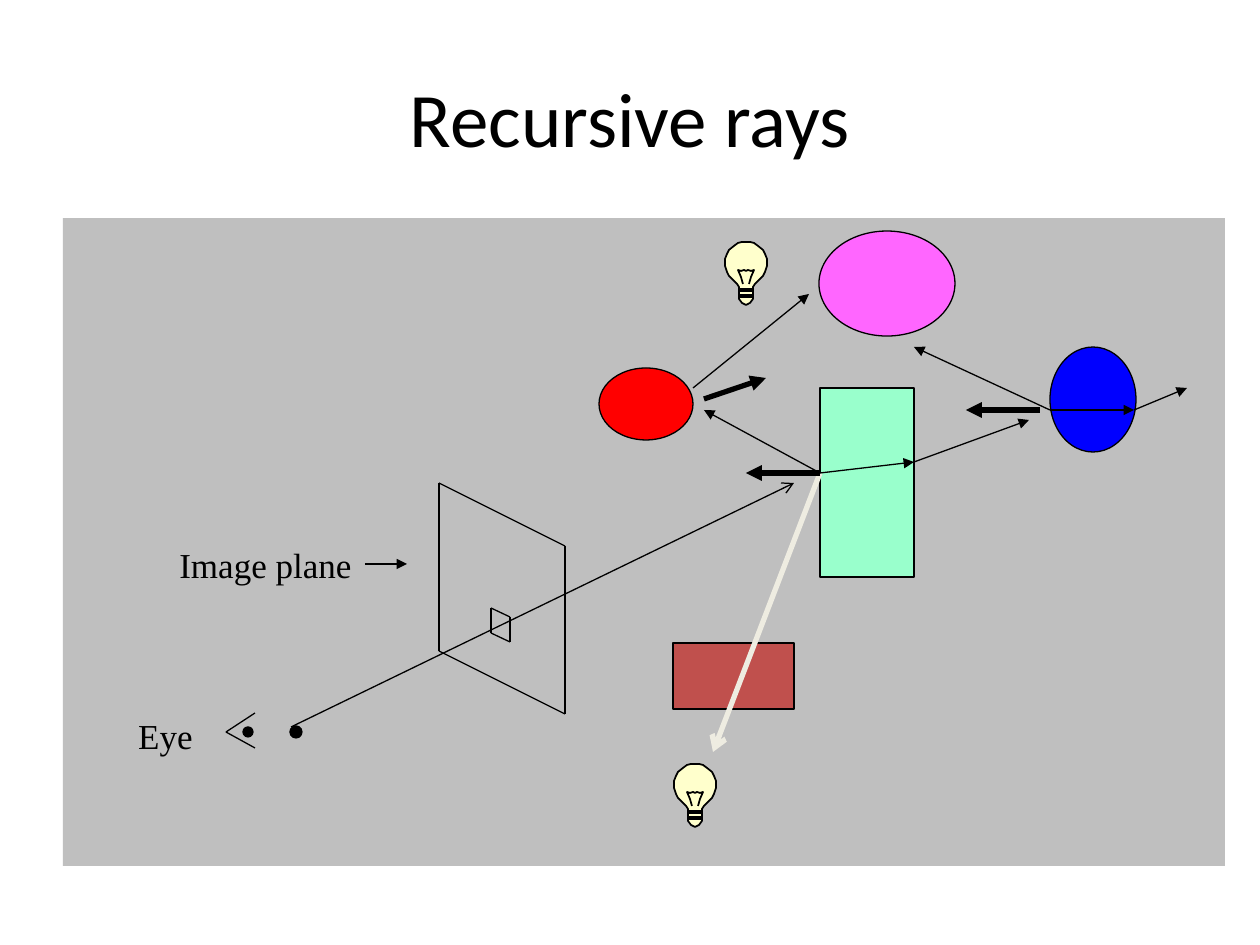
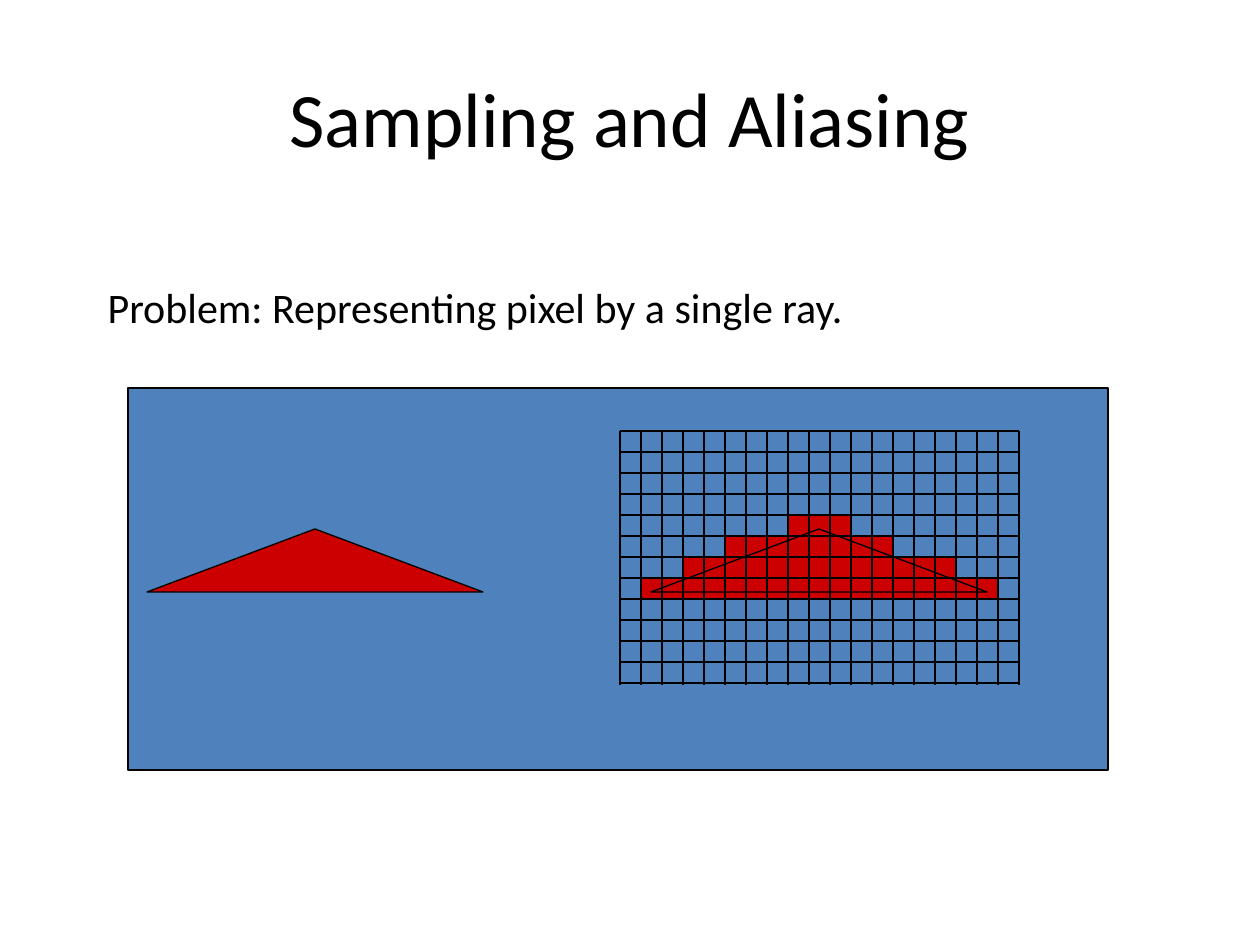
"""Build two ray tracing slides: recursive rays, and sampling with aliasing."""
import lxml.etree
import pptx
import pptx.dml.color
import pptx.enum.shapes
import pptx.enum.text
import pptx.oxml.ns
import pptx.util

PX = 914400 / 126
COLORS = {
    "black": "000000", "panel": "BFBFBF", "bulb": "FFFFCC", "brick": "C0504D",
    "red": "FF0000", "mint": "99FFCC", "blue": "0000FF", "pink": "FF66FF",
    "shadow_ray": "EEECE1", "sky": "4F81BD", "crimson": "CC0000",
}
RGB = {name: pptx.dml.color.RGBColor.from_string(c) for name, c in COLORS.items()}
SHAPE = pptx.enum.shapes.MSO_SHAPE
ALIGN = pptx.enum.text.PP_ALIGN
ANCHOR = pptx.enum.text.MSO_ANCHOR
qn = pptx.oxml.ns.qn


def paint(sp, fill=None, width=0.75):
    """Set fill and outline of a shape, without shadow."""
    sp.shadow.inherit = False
    if fill:
        sp.fill.solid()
        sp.fill.fore_color.rgb = RGB[fill]
    else:
        sp.fill.background()
    if width:
        sp.line.color.rgb = RGB["black"]
        sp.line.width = pptx.util.Pt(width)
    else:
        sp.line.fill.background()


def draw_line(s, ends, width=0.75, head=None, color="black"):
    """Draw a straight line from (x1, y1) to (x2, y2), given in px."""
    cn = s.shapes.add_connector(
        pptx.enum.shapes.MSO_CONNECTOR.STRAIGHT, *[round(v * PX) for v in ends])
    cn.line.color.rgb = RGB[color]
    cn.line.width = pptx.util.Pt(width)
    spPr = cn._element.spPr
    if head:
        lxml.etree.SubElement(spPr.find(qn("a:ln")), qn("a:tailEnd"), type=head)
    lxml.etree.SubElement(spPr, qn("a:effectLst"))


prs = pptx.Presentation()
prs.slide_width = round(1260 * PX)
prs.slide_height = round(945 * PX)

slides = []
for title, layout in [("Recursive rays", 5), ("Sampling and Aliasing", 1)]:
    s = prs.slides.add_slide(prs.slide_layouts[layout])
    sp = s.shapes.title
    sp.left, sp.top, sp.width, sp.height = [round(v * PX) for v in (63, 38, 1134, 158)]
    tf = sp.text_frame
    tf.text = title
    tf.vertical_anchor = ANCHOR.MIDDLE
    p = tf.paragraphs[0]
    p.alignment = ALIGN.CENTER
    r = p.runs[0]
    r.font.name = "Calibri"
    r.font.size = pptx.util.Pt(44)
    r.font.color.rgb = RGB["black"]
    slides.append(s)
rays, aliasing = slides

scene = [
    (SHAPE.RECTANGLE, (63, 218, 1162, 648), "panel", 0),
    (SHAPE.OVAL, (243, 727, 10, 10), "black", 0.75),
    (SHAPE.OVAL, (290, 726, 12, 12), "black", 0.75),
    (SHAPE.RECTANGLE, (673, 643, 121, 66), "brick", 0.75),
    (SHAPE.OVAL, (599, 368, 94, 72), "red", 0.75),
    (SHAPE.RECTANGLE, (820, 388, 94, 189), "mint", 0.75),
    (SHAPE.OVAL, (1050, 347, 86, 105), "blue", 0.75),
    (SHAPE.OVAL, (819, 231, 136, 105), "pink", 0.75),
]
for kind, box, fill, width in scene:
    paint(rays.shapes.add_shape(kind, *[round(v * PX) for v in box]), fill, width)

half = [(0, 0), (4, 0), (8, 1), (12, 4), (17, 8), (19, 12), (21, 17), (21, 24),
        (19, 30), (17, 34), (12, 39), (9, 42), (7, 45), (7, 57), (4, 61), (0, 63)]
glass = half + [(-x, y) for x, y in half[-2:0:-1]]
filament = [(-3, 42), (-5, 35), (-8, 28), (-5, 29), (-2, 28), (0, 29),
            (2, 28), (5, 29), (8, 28), (5, 35), (3, 42)]
threads = [[(-7, y), (7, y), (7, y + 2), (-7, y + 2)] for y in (47, 53)]
for cx, top in [(746, 242), (695, 764)]:
    for outlines, fill in [([glass], "bulb"), ([filament] + threads, None)]:
        fb = None
        for outline in outlines:
            pts = [(cx + x, top + y) for x, y in outline]
            if fb is None:
                fb = rays.shapes.build_freeform(*pts[0], scale=PX)
            else:
                fb.move_to(*pts[0])
            fb.add_line_segments(pts[1:], close=fill is not None)
        paint(fb.convert_to_shape(), fill, 1)

for x, y, w, slope, h in [(439, 483, 126, 63, 168), (491, 608, 19, 9, 25)]:
    right, low = x + w, y + slope
    for ends in [(x, y, right, low), (right, low, right, low + h),
                 (x, y, x, y + h), (x, y + h, right, low + h)]:
        draw_line(rays, ends)

for ends in [(255, 713, 226, 732), (226, 732, 255, 748)]:
    draw_line(rays, ends)
draw_line(rays, (291, 727, 794, 483), head="arrow")
draw_line(rays, (820, 473, 713, 752), 3, "arrow", "shadow_ray")
for ends in [(365, 564, 407, 564), (820, 473, 704, 410), (820, 473, 914, 462),
             (914, 462, 1029, 420), (693, 388, 809, 294), (1050, 410, 1134, 410),
             (1050, 410, 914, 347), (1134, 410, 1187, 388)]:
    draw_line(rays, ends, head="triangle")
for normal in [(820, 473, 746, 473), (704, 399, 766, 378), (1040, 410, 966, 410)]:
    draw_line(rays, normal, 3, "triangle")

for label, box in [("Eye", (122, 708, 87, 54)), ("Image plane", (166, 537, 199, 54))]:
    tf = rays.shapes.add_textbox(*[round(v * PX) for v in box]).text_frame
    tf.text = label
    tf.word_wrap = True
    p = tf.paragraphs[0]
    p.alignment = ALIGN.CENTER
    r = p.runs[0]
    r.font.name = "Times New Roman"
    r.font.size = pptx.util.Pt(20)
    r.font.color.rgb = RGB["black"]

sp = aliasing.placeholders[1]
sp.left, sp.top, sp.width, sp.height = [round(v * PX) for v in (95, 275, 1071, 63)]
tf = sp.text_frame
tf.text = "Problem: Representing pixel by a single ray."
p = tf.paragraphs[0]
pPr = p._p.get_or_add_pPr()
pPr.set("marL", str(round(47 * PX)))
pPr.set("indent", str(round(-47 * PX)))
lxml.etree.SubElement(pPr, qn("a:buNone"))
p.space_before = pptx.util.Pt(0)
r = p.runs[0]
r.font.name = "Calibri"
r.font.size = pptx.util.Pt(24)
r.font.color.rgb = RGB["black"]

CELL, COLS, ROWS = 21, 19, 12
grid_x, grid_y = 620, 431
grid_right, grid_bottom = grid_x + COLS * CELL, grid_y + ROWS * CELL

boxes = [((128, 388, 980, 382), "sky")]
for row, (col, count) in enumerate([(8, 3), (5, 8), (3, 13), (1, 17)], start=4):
    boxes.append(((grid_x + col * CELL, grid_y + row * CELL, count * CELL, CELL), "crimson"))
for box, fill in boxes:
    paint(aliasing.shapes.add_shape(SHAPE.RECTANGLE, *[round(v * PX) for v in box]), fill)

for col in range(COLS + 1):
    x = grid_x + col * CELL
    draw_line(aliasing, (x, grid_y, x, grid_bottom + 2), 1)
for row in range(ROWS + 1):
    y = grid_y + row * CELL
    draw_line(aliasing, (grid_x, y, grid_right, y), 1)

for x, fill in [(651, None), (147, "crimson")]:
    box = [round(v * PX) for v in (x, 529, 336, 63)]
    paint(aliasing.shapes.add_shape(SHAPE.ISOSCELES_TRIANGLE, *box), fill)

prs.save("out.pptx")
